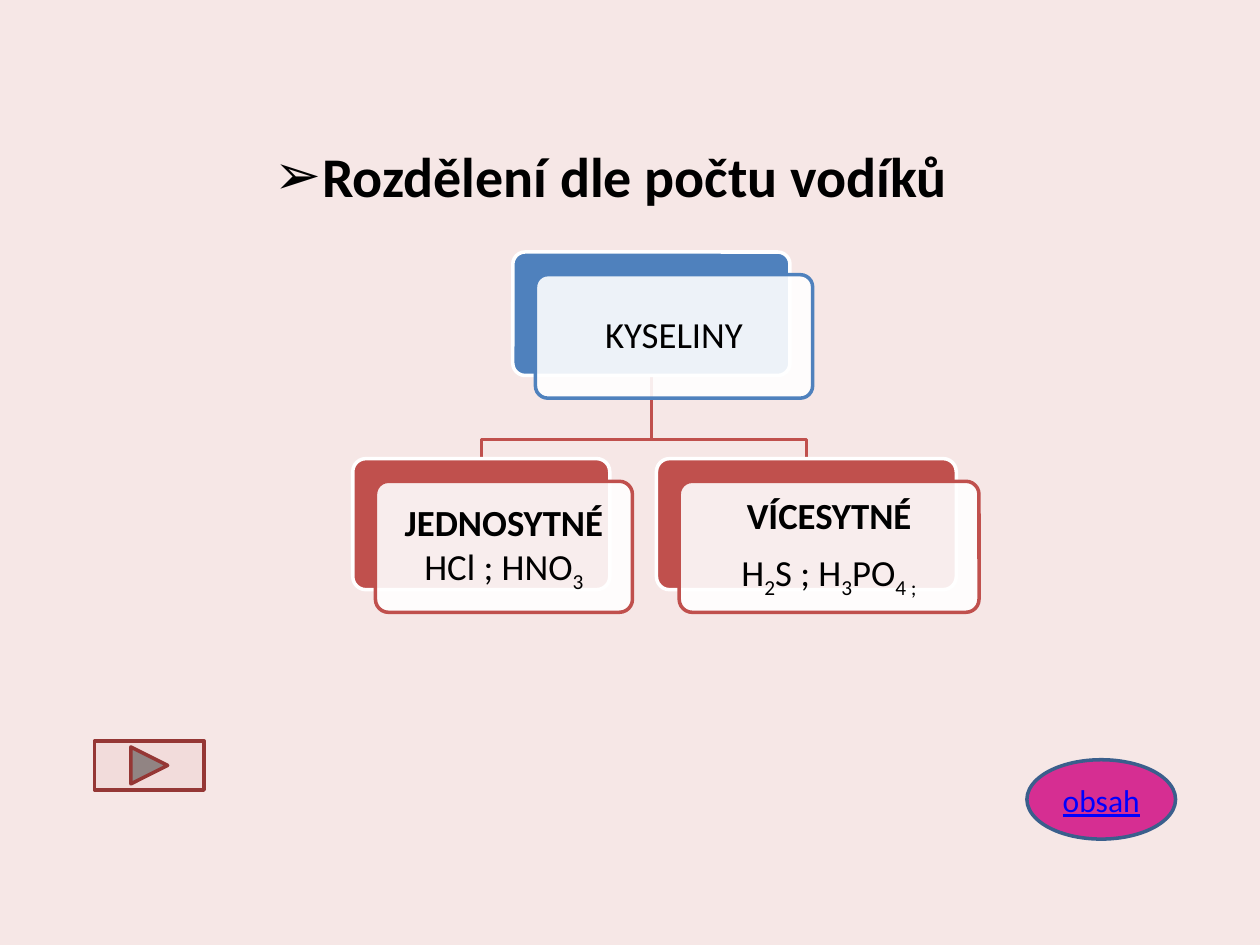
from dataclasses import dataclass

from lxml import etree
from pptx import Presentation
from pptx.dml.color import RGBColor
from pptx.enum.shapes import MSO_SHAPE
from pptx.enum.text import MSO_ANCHOR, MSO_AUTO_SIZE, PP_ALIGN
from pptx.oxml.ns import qn
from pptx.shapes.autoshape import Shape
from pptx.slide import Slide
from pptx.text.text import _Paragraph
from pptx.util import Inches, Pt

ROUNDED = MSO_SHAPE.ROUNDED_RECTANGLE
ELLIPSE = MSO_SHAPE.OVAL
FORWARD_BUTTON = MSO_SHAPE.ACTION_BUTTON_FORWARD_OR_NEXT
CENTER = PP_ALIGN.CENTER
MIDDLE = MSO_ANCHOR.MIDDLE
TOP = MSO_ANCHOR.TOP
NO_AUTOFIT = MSO_AUTO_SIZE.NONE

BACKGROUND = RGBColor(0xF6, 0xE7, 0xE6)
BLACK = RGBColor(0x00, 0x00, 0x00)
WHITE = RGBColor(0xFF, 0xFF, 0xFF)
BLUE = RGBColor(0x4F, 0x81, 0xBD)
RED = RGBColor(0xC0, 0x50, 0x4D)
PINK = RGBColor(0xD6, 0x2E, 0x92)
DARK_BLUE = RGBColor(0x3A, 0x5F, 0x8C)
LINK_BLUE = RGBColor(0x00, 0x00, 0xFF)
PALE_RED = RGBColor(0xF2, 0xDC, 0xDB)
DARK_RED = RGBColor(0x95, 0x37, 0x35)

FONT = "Calibri"
PANEL_SHIFT = 0.18
PANEL_OPACITY = 90
PANEL_INSET = Inches(0.09)
LINE_WIDTH = Pt(2)


@dataclass
class Piece:
    text: str
    bold: bool = False
    subscript: bool = False


@dataclass
class Node:
    left: float
    top: float
    width: float
    height: float
    color: RGBColor
    paragraphs: list[list[Piece]]

    @property
    def center(self) -> float:
        return self.left + self.width / 2


ROOT = Node(4.07, 2, 2.2, 0.98, BLUE, [[Piece("KYSELINY")]])
CHILDREN = [
    Node(2.8, 3.64, 2.04, 1.04, RED, [
        [Piece("JEDNOSYTNÉ ", bold=True), Piece("HCl ; HNO"), Piece("3", subscript=True)],
    ]),
    Node(5.21, 3.64, 2.38, 1.04, RED, [
        [Piece("VÍCESYTNÉ", bold=True)],
        [Piece("H"), Piece("2", subscript=True), Piece("S ; H"),
         Piece("3", subscript=True), Piece("PO"), Piece("4 ;", subscript=True)],
    ]),
]


def add_box(slide: Slide, kind: int, left: float, top: float, width: float,
            height: float, fill: RGBColor, line: RGBColor) -> Shape:
    shape = slide.shapes.add_shape(
        kind, Inches(left), Inches(top), Inches(width), Inches(height))
    shape.shadow.inherit = False
    shape.fill.solid()
    shape.fill.fore_color.rgb = fill
    shape.line.color.rgb = line
    shape.line.width = LINE_WIDTH
    return shape


def set_opacity(shape: Shape, percent: int) -> None:
    color = shape.fill._xPr.find(qn("a:solidFill"))[0]
    etree.SubElement(color, qn("a:alpha"), val=str(percent * 1000))


def write_pieces(paragraph: _Paragraph, pieces: list[Piece]) -> None:
    paragraph.alignment = CENTER
    paragraph.line_spacing = 0.9
    paragraph.space_after = Pt(7)
    for piece in pieces:
        run = paragraph.add_run()
        run.text = piece.text
        run.font.name = FONT
        run.font.size = Pt(21)
        run.font.bold = piece.bold
        run.font.color.rgb = BLACK
        if piece.subscript:
            run.font._element.set("baseline", "-25000")


def add_node(slide: Slide, node: Node) -> None:
    back = add_box(slide, ROUNDED, node.left, node.top, node.width, node.height,
                   node.color, WHITE)
    panel = add_box(slide, ROUNDED, node.left + PANEL_SHIFT, node.top + PANEL_SHIFT,
                    node.width, node.height, WHITE, node.color)
    set_opacity(panel, PANEL_OPACITY)
    for shape in (back, panel):
        shape.adjustments[0] = 0.1

    frame = panel.text_frame
    frame.word_wrap = True
    frame.vertical_anchor = MIDDLE
    frame.margin_left = frame.margin_right = PANEL_INSET
    frame.margin_top = frame.margin_bottom = PANEL_INSET
    for index, pieces in enumerate(node.paragraphs):
        paragraph = frame.add_paragraph() if index else frame.paragraphs[0]
        write_pieces(paragraph, pieces)


def add_branch(slide: Slide, parent: Node, child: Node) -> None:
    start = parent.top + parent.height
    bend = child.top - 0.15
    builder = slide.shapes.build_freeform(Inches(parent.center), Inches(start))
    builder.add_line_segments(
        [(Inches(x), Inches(y)) for x, y in (
            (parent.center, bend), (child.center, bend), (child.center, child.top))],
        close=False)
    branch = builder.convert_to_shape()
    branch.shadow.inherit = False
    branch.fill.background()
    branch.line.color.rgb = RED
    branch.line.width = LINE_WIDTH


def format_title(title: Shape) -> None:
    title.left, title.top = Inches(0.35), Inches(1.07)
    title.width, title.height = Inches(9), Inches(4.05)
    frame = title.text_frame
    frame.text = "Rozdělení dle počtu vodíků"
    frame.auto_size = NO_AUTOFIT
    frame.vertical_anchor = TOP
    paragraph = frame.paragraphs[0]
    paragraph.alignment = CENTER
    paragraph.space_before = Pt(6)
    font = paragraph.runs[0].font
    font.name, font.size, font.bold = FONT, Pt(32), True
    font.color.rgb = BLACK

    # Arrow bullet with a hanging indent
    properties = paragraph._p.get_or_add_pPr()
    properties.set("marL", str(Inches(0.38)))
    properties.set("indent", str(-Inches(0.38)))
    etree.SubElement(properties, qn("a:buFont"), typeface="Arial")
    etree.SubElement(properties, qn("a:buChar"), char="➢")


def add_contents_button(slide: Slide) -> None:
    button = add_box(slide, ELLIPSE, 8.15, 6.03, 1.18, 0.63, PINK, DARK_BLUE)
    frame = button.text_frame
    frame.text = "obsah"
    frame.vertical_anchor = MIDDLE
    frame.paragraphs[0].alignment = CENTER
    font = frame.paragraphs[0].runs[0].font
    font.name, font.size, font.underline = FONT, Pt(18), True
    font.color.rgb = LINK_BLUE


def main() -> None:
    presentation = Presentation()
    presentation.slide_width, presentation.slide_height = Inches(10), Inches(7.5)
    slide = presentation.slides.add_slide(presentation.slide_layouts[5])
    slide.background.fill.solid()
    slide.background.fill.fore_color.rgb = BACKGROUND

    format_title(slide.shapes.title)
    add_contents_button(slide)

    # Hierarchy: branches lie behind the nodes
    for child in CHILDREN:
        add_branch(slide, ROOT, child)
    for node in (ROOT, *CHILDREN):
        add_node(slide, node)

    # Navigation
    add_box(slide, FORWARD_BUTTON, 0.75, 5.88, 0.87, 0.39, PALE_RED, DARK_RED)

    presentation.save("out.pptx")


if __name__ == "__main__":
    main()
